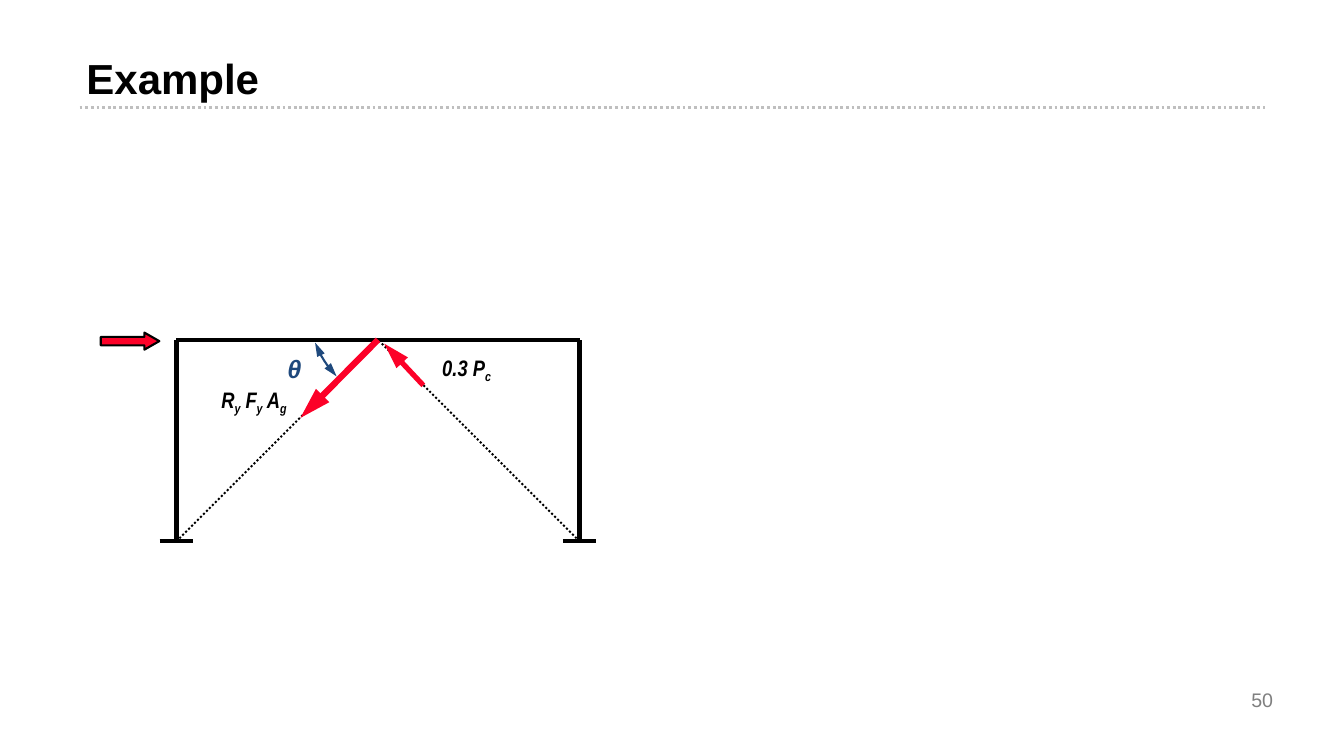
import math

import pptx
import pptx.dml.color
import pptx.enum.dml
import pptx.enum.shapes
import pptx.enum.text
import pptx.oxml.ns
import pptx.util
from lxml import etree

Pt = pptx.util.Pt
ALIGN = pptx.enum.text.PP_ALIGN
ANCHOR = pptx.enum.text.MSO_ANCHOR
COLORS = {
    "black": "000000",
    "rule": "BFBFBF",
    "number": "7F7F7F",
    "force": "FC0128",
    "angle": "1F497D",
}
LEFT, APEX, RIGHT = 126, 270, 414
BEAM, BASE = 242.7, 386.7
SUPPORT_HALF = 12


def rgb(name):
    return pptx.dml.color.RGBColor.from_string(COLORS[name])


def style_line(shape, color, width, dotted=False, arrows=()):
    """Arrows holds headEnd and/or tailEnd, in that order."""
    shape.line.color.rgb = rgb(color)
    shape.line.width = Pt(width)
    if dotted:
        shape.line.dash_style = pptx.enum.dml.MSO_LINE.ROUND_DOT
    line = shape.line._get_or_add_ln()
    for end in arrows:
        etree.SubElement(line, pptx.oxml.ns.qn(f"a:{end}"),
                         type="triangle", w="med", len="lg")


def add_line(slide, start, end, color="black", width=3, dotted=False, arrows=()):
    connector = slide.shapes.add_connector(
        pptx.enum.shapes.MSO_CONNECTOR.STRAIGHT,
        *(Pt(value) for value in (*start, *end)))
    style_line(connector, color, width, dotted, arrows)
    etree.SubElement(connector._element.spPr, pptx.oxml.ns.qn("a:effectLst"))


def add_text(slide, box, parts, size, color="black", font="Arial", bold=True,
             italic=False, align=ALIGN.LEFT, anchor=ANCHOR.TOP):
    """Parts alternate between normal text and subscripts."""
    text_box = slide.shapes.add_textbox(*(Pt(value) for value in box))
    frame = text_box.text_frame
    frame.word_wrap = True
    frame.vertical_anchor = anchor
    paragraph = frame.paragraphs[0]
    paragraph.alignment = align
    for index, part in enumerate(parts):
        run = paragraph.add_run()
        run.text = part
        run.font.name = font
        run.font.size = Pt(size)
        run.font.bold = bold
        run.font.italic = italic
        run.font.color.rgb = rgb(color)
        if index % 2:
            run._r.get_or_add_rPr().set("baseline", "-25000")


def add_frame(slide):
    for x in (LEFT, RIGHT):
        add_line(slide, (x, BASE), (x, BEAM))
        add_line(slide, (APEX, BEAM), (x, BEAM))
        add_line(slide, (x, BASE), (APEX, BEAM), width=1.5, dotted=True)
        add_line(slide, (x - SUPPORT_HALF, BASE), (x + SUPPORT_HALF, BASE))


def add_lateral_load(slide):
    arrow = slide.shapes.add_shape(
        pptx.enum.shapes.MSO_SHAPE.RIGHT_ARROW, Pt(72), Pt(237.6), Pt(41.8), Pt(12.2))
    arrow.adjustments[1] = 0.875
    arrow.shadow.inherit = False
    arrow.fill.solid()
    arrow.fill.fore_color.rgb = rgb("force")
    style_line(arrow, "black", 1.5)


def add_angle_arc(slide):
    center_x, center_y, radius = 292.3, 218.9, 72
    start, end, steps = 136, 159, 8
    angles = [math.radians(start + (end - start) * step / steps)
              for step in range(steps + 1)]
    points = [(Pt(center_x + radius * math.cos(angle)),
               Pt(center_y + radius * math.sin(angle))) for angle in angles]
    builder = slide.shapes.build_freeform(*points[0])
    builder.add_line_segments(points[1:], close=False)
    arc = builder.convert_to_shape()
    arc.shadow.inherit = False
    arc.fill.background()
    style_line(arc, "angle", 1.5, arrows=("headEnd", "tailEnd"))


def main():
    presentation = pptx.Presentation()
    presentation.slide_width = Pt(960)
    presentation.slide_height = Pt(540)
    slide = presentation.slides.add_slide(presentation.slide_layouts[6])

    add_line(slide, (56.9, 77), (903.6, 77), "rule", 2, dotted=True)
    add_text(slide, (54.7, 33.8, 861.8, 49), ["Example"], 30)
    add_text(slide, (692.6, 485.3, 223.9, 28.8), ["50"], 14, "number", bold=False,
             align=ALIGN.RIGHT, anchor=ANCHOR.MIDDLE)

    add_lateral_load(slide)
    add_frame(slide)
    add_line(slide, (APEX, BEAM), (214.6, 298.5), "force", 4.5, arrows=("tailEnd",))
    add_line(slide, (274.5, 245.5), (302.4, 275.3), "force", 3.75, arrows=("headEnd",))
    add_angle_arc(slide)

    label = {"italic": True, "align": ALIGN.CENTER}
    add_text(slide, (148.3, 272.2, 66.2, 26.6), ["R", "y", " F", "y", " A", "g"],
             16, font="Arial Narrow", **label)
    add_text(slide, (300.2, 249.1, 66.2, 26.6), ["0.3 P", "c"],
             16, font="Arial Narrow", **label)
    add_text(slide, (177.1, 249.1, 66.2, 28.8), ["θ"], 18, "angle", **label)

    presentation.save("out.pptx")


if __name__ == "__main__":
    main()
